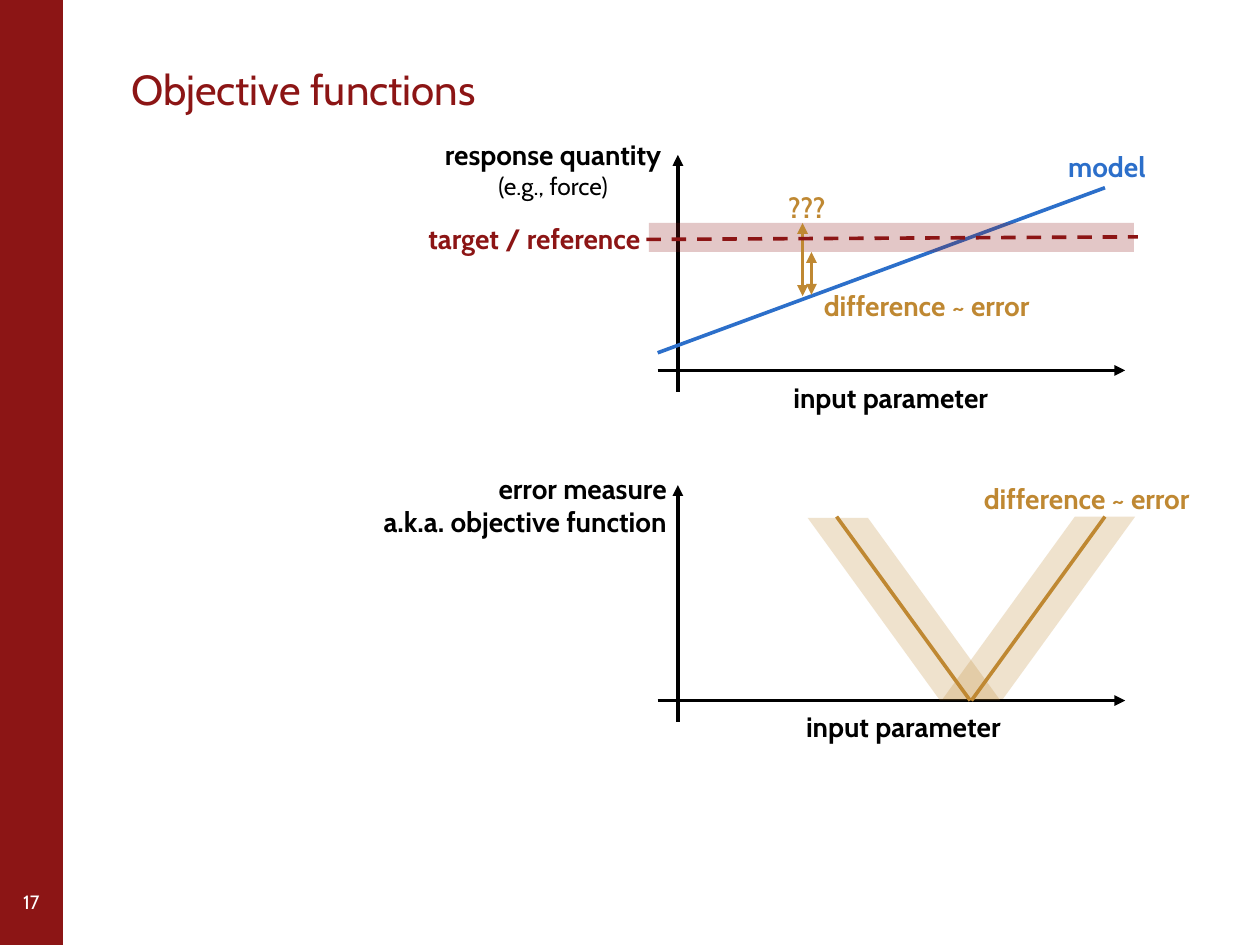
from lxml.etree import SubElement
from pptx import Presentation
from pptx.dml.color import RGBColor
from pptx.enum.dml import MSO_LINE
from pptx.enum.shapes import MSO_CONNECTOR, MSO_SHAPE
from pptx.enum.text import MSO_ANCHOR, PP_ALIGN
from pptx.oxml.ns import qn
from pptx.util import Inches, Pt

RED = RGBColor(0x8C, 0x15, 0x15)
GOLD = RGBColor(0xBF, 0x88, 0x32)
BLUE = RGBColor(0x2C, 0x6F, 0xCA)
BLACK = RGBColor(0, 0, 0)
WHITE = RGBColor(255, 255, 255)
FONT = "Cabin"
LEFT, MID, RIGHT = PP_ALIGN.LEFT, PP_ALIGN.CENTER, PP_ALIGN.RIGHT

# The slide is a grid of 100 columns by 75 rows.
COLS, ROWS = 100, 75
CELL = Inches(0.1)
BAR = 5  # columns of the side bar
PLOTS = (29.4, 55.6)  # row of each input axis

# text lines, colour, alignment, (column, row, columns, rows)
LABELS = [
    (["input parameter"], BLACK, MID, (60.6, 29.7, 20.2, 4.1)),
    (["error measure", "a.k.a. objective function"], BLACK, RIGHT,
     (26.2, 36.9, 27.7, 7.1)),
    (["response quantity", "(e.g., force)"], BLACK, MID,
     (33.7, 10.4, 20.4, 6.2)),
    (["difference ~ error"], GOLD, LEFT, (64.4, 22.4, 20, 4.1)),
    (["difference ~ error"], GOLD, LEFT, (77.1, 37.7, 20, 4.1)),
    (["input parameter"], BLACK, MID, (61.6, 55.8, 20.2, 4.1)),
    (["model"], BLUE, MID, (82.6, 11.4, 10.5, 4.1)),
    (["target / reference"], RED, RIGHT, (31.9, 17.1, 19.9, 3.4)),
    (["???"], GOLD, LEFT, (61.6, 14.6, 5.6, 4.1)),
]
LIGHT = {"(e.g., force)": {"size": Pt(14), "bold": False}}

# start, end, colour, arrowheads
CURVES = [
    ((52.2, 28), (87.7, 14.9), BLUE, ()),
    ((64.4, 20), (64.4, 23.4), GOLD, ("head", "tail")),
    ((77.1, 55.6), (87.7, 41), GOLD, ()),
    ((66.4, 41), (77, 55.6), GOLD, ()),
]
GAP = ((63.7, 17.7), (63.7, 23.5), GOLD, ("head", "tail"))
TARGET = ((51.3, 19), (90.3, 18.8), RED, ())

prs = Presentation()
prs.slide_width, prs.slide_height = COLS * CELL, ROWS * CELL
slide = prs.slides.add_slide(prs.slide_layouts[6])
shapes = slide.shapes


def grid(*cells):
    return [round(c * CELL) for c in cells]


def shape(kind, box, color, alpha=None):
    item = shapes.add_shape(kind, *grid(*box))
    item.shadow.inherit = False
    item.line.fill.background()
    item.fill.solid()
    item.fill.fore_color.rgb = color
    if alpha:
        tint = item.fill._xPr.find(".//" + qn("a:srgbClr"))
        SubElement(tint, qn("a:alpha"), val=str(alpha * 1000))
    return item


def slant(box, flip=False):
    item = shape(MSO_SHAPE.PARALLELOGRAM, box, GOLD, 24)
    item.adjustments[0] = 0.725
    if flip:
        item._element.spPr.find(qn("a:xfrm")).set("flipV", "1")


def line(start, end, color, heads=(), dash=None):
    item = shapes.add_connector(MSO_CONNECTOR.STRAIGHT, *grid(*start, *end))
    item.line.color.rgb = color
    item.line.width = Pt(2.08)
    if dash:
        item.line.dash_style = dash
    for head in heads:
        SubElement(item.line._ln, qn(f"a:{head}End"), type="triangle")
    SubElement(item._element.spPr, qn("a:effectLst"))


def text(rows, color, align, box, font=None, para=None, frame=None):
    """Put a text box on the grid, with rows parted by line breaks."""
    body = shapes.add_textbox(*grid(*box)).text_frame
    for key, val in {"word_wrap": True, **(frame or {})}.items():
        setattr(body, key, val)
    par = body.paragraphs[0]
    for key, val in {"alignment": align, **(para or {})}.items():
        setattr(par, key, val)
    for num, row in enumerate(rows):
        if num:
            par.add_line_break()
        run = par.add_run()
        run.text = row
        run.font.color.rgb = color
        style = {"name": FONT, "size": Pt(16), "bold": True}
        for key, val in {**style, **(font or {}), **LIGHT.get(row, {})}.items():
            setattr(run.font, key, val)


shape(MSO_SHAPE.RECTANGLE, (0, 0, BAR, ROWS), RED)
text(["17"], WHITE, MID, (0, 68.1, BAR, 7),
     font={"size": Pt(11), "bold": False},
     frame={"word_wrap": False, "vertical_anchor": MSO_ANCHOR.MIDDLE,
            "margin_left": Inches(0.05), "margin_right": Inches(0.05),
            "margin_top": 0, "margin_bottom": 0})
text(["Objective functions"], RED, LEFT, (10.4, 5.2, 84.3, 4.3),
     font={"size": Pt(24), "bold": False}, para={"line_spacing": 0.85},
     frame={"margin_left": 0})

slant((74.8, 41, 15.3, 14.5))
for base in PLOTS:
    line((52.2, base), (89.3, base), BLACK, ["tail"])
    line((53.8, base + 1.7), (53.8, base - 17.1), BLACK, ["tail"])
for curve in CURVES:
    line(*curve)
for label in LABELS:
    text(*label, para={"space_before": Pt(6)})
shape(MSO_SHAPE.RECTANGLE, (51.5, 17.7, 38.5, 2.3), RED, 24)
line(*GAP)
slant((64.1, 41.1, 15.3, 14.5), flip=True)
line(*TARGET, dash=MSO_LINE.DASH)

prs.save("out.pptx")
